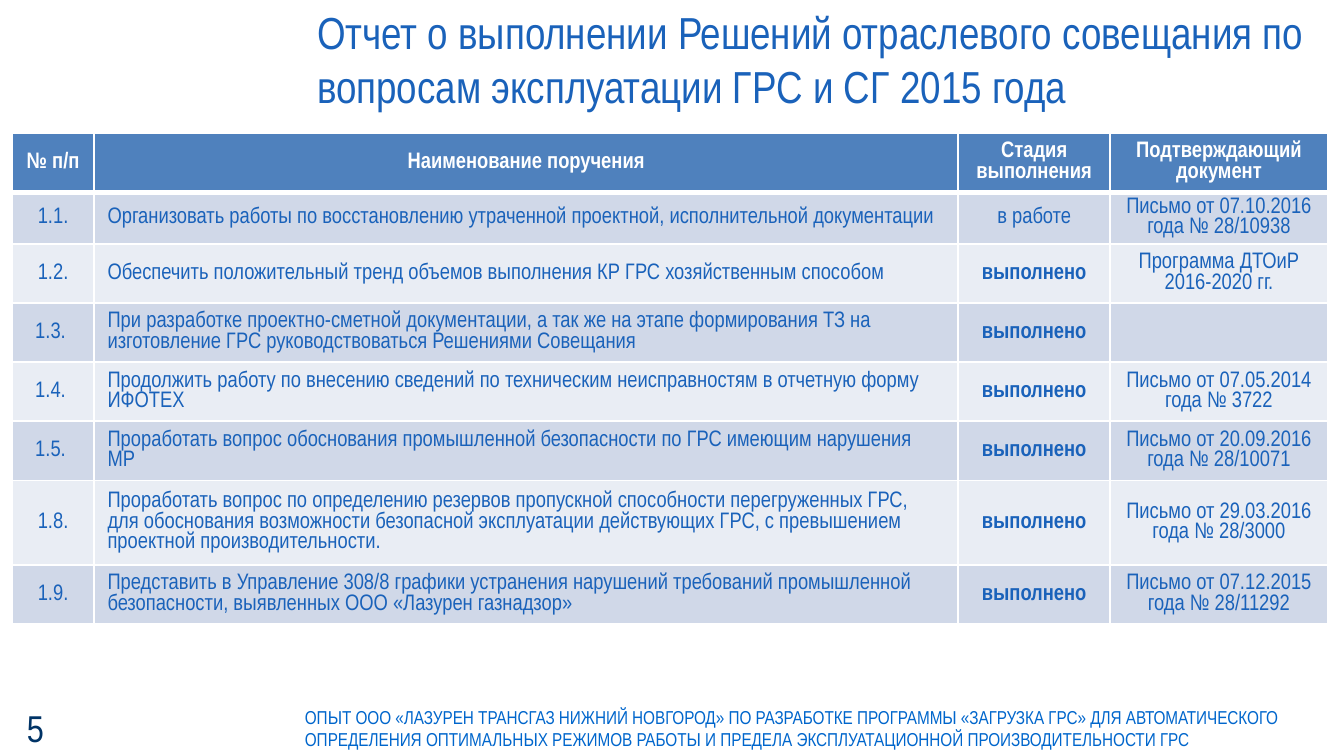
import dataclasses

import lxml.etree
import pptx
import pptx.dml.color
import pptx.enum.text
import pptx.oxml.ns
import pptx.util

RGBColor = pptx.dml.color.RGBColor
Align = pptx.enum.text.PP_ALIGN
Anchor = pptx.enum.text.MSO_ANCHOR

WHITE = RGBColor(0xFF, 0xFF, 0xFF)
TEXT_BLUE = RGBColor(0x1A, 0x62, 0xBA)
FOOTER_BLUE = RGBColor(0x00, 0x66, 0xCC)
NUMBER_BLUE = RGBColor(0x00, 0x33, 0x66)
HEADER_FILL = RGBColor(0x4F, 0x81, 0xBD)
BAND_FILLS = (RGBColor(0xD0, 0xD8, 0xE8), RGBColor(0xE9, 0xED, 0xF4))

FONT = "Arial Narrow"
SLIDE_WIDTH = pptx.util.Inches(10)
SLIDE_HEIGHT = SLIDE_WIDTH * 9 // 16
GRID_STEP = SLIDE_WIDTH // 1000

COLUMN_SPANS = (61, 643, 113, 162)
HEADER_SPAN = 44
HEADERS = ("№ п/п", "Наименование поручения", "Стадия выполнения", "Подтверждающий документ")
DONE = "выполнено"


@dataclasses.dataclass(frozen=True)
class Area:
    """A rectangle in grid columns and rows."""
    column: int
    row: int
    columns: int
    rows: int

    def lengths(self) -> list[int]:
        return [span * GRID_STEP for span in dataclasses.astuple(self)]


@dataclasses.dataclass(frozen=True)
class TextStyle:
    size: int
    color: RGBColor
    bold: bool = False
    align: Align = Align.LEFT
    line_spacing: float | pptx.util.Length = 1.0


@dataclasses.dataclass(frozen=True)
class Assignment:
    number: str
    task: str
    document: str = ""
    stage: str = DONE
    span: int = 44


ASSIGNMENTS = (
    Assignment("1.1.", "Организовать работы по восстановлению утраченной проектной, "
               "исполнительной документации",
               "Письмо от 07.10.2016 года № 28/10938", stage="в работе", span=25),
    Assignment("1.2.", "Обеспечить положительный тренд объемов выполнения КР ГРС "
               "хозяйственным способом", "Программа ДТОиР 2016-2020 гг."),
    Assignment("1.3. ", "При разработке проектно-сметной документации, а так же на этапе "
               "формирования ТЗ на изготовление ГРС руководствоваться Решениями Совещания"),
    Assignment("1.4. ", "Продолжить работу по внесению сведений по техническим "
               "неисправностям в отчетную форму ИФОТЕХ",
               "Письмо от 07.05.2014 года № 3722"),
    Assignment("1.5. ", "Проработать вопрос обоснования промышленной безопасности по ГРС "
               "имеющим нарушения МР", "Письмо от 20.09.2016 года № 28/10071"),
    Assignment("1.8.", "Проработать вопрос по определению резервов пропускной способности "
               "перегруженных ГРС, для обоснования возможности безопасной эксплуатации "
               "действующих ГРС, с превышением проектной производительности.",
               "Письмо от 29.03.2016 года № 28/3000", span=63),
    Assignment("1.9.", "Представить в Управление 308/8 графики устранения нарушений "
               "требований промышленной безопасности, выявленных ООО «Лазурен газнадзор»",
               "Письмо от 07.12.2015 года № 28/11292"),
)


def write(text_frame, text: str, style: TextStyle) -> None:
    text_frame.word_wrap = True
    paragraph = text_frame.paragraphs[0]
    paragraph.text = text
    paragraph.alignment = style.align
    paragraph.line_spacing = style.line_spacing
    font = paragraph.font
    font.name = FONT
    font.size = pptx.util.Pt(style.size)
    font.bold = style.bold
    font.color.rgb = style.color


def add_title(slide, area: Area, text: str, style: TextStyle) -> None:
    title = slide.shapes.title
    title.left, title.top, title.width, title.height = area.lengths()
    title.text_frame.auto_size = pptx.enum.text.MSO_AUTO_SIZE.NONE
    title.text_frame.vertical_anchor = Anchor.MIDDLE
    write(title.text_frame, text, style)


def add_text(slide, area: Area, text: str, style: TextStyle):
    text_frame = slide.shapes.add_textbox(*area.lengths()).text_frame
    write(text_frame, text, style)
    return text_frame


def add_borders(cell, top: int, bottom: int) -> None:
    """Draw white cell borders; top and bottom are widths in points."""
    properties = cell._tc.get_or_add_tcPr()
    qn = pptx.oxml.ns.qn
    for side, width in (("L", 1), ("R", 1), ("T", top), ("B", bottom)):
        line = lxml.etree.SubElement(properties, qn(f"a:ln{side}"), w=str(pptx.util.Pt(width)))
        fill = lxml.etree.SubElement(line, qn("a:solidFill"))
        lxml.etree.SubElement(fill, qn("a:srgbClr"), val=str(WHITE))


def fill_cell(cell, text: str, style: TextStyle, fill: RGBColor, top: int, bottom: int) -> None:
    cell.vertical_anchor = Anchor.MIDDLE
    cell.margin_left = cell.margin_right = pptx.util.Inches(0.1)
    cell.margin_top = cell.margin_bottom = pptx.util.Inches(0.04)
    write(cell.text_frame, text, style)
    add_borders(cell, top, bottom)
    cell.fill.solid()
    cell.fill.fore_color.rgb = fill


def add_assignment_table(slide, area: Area) -> None:
    row_spans = [HEADER_SPAN] + [assignment.span for assignment in ASSIGNMENTS]
    frame = slide.shapes.add_table(len(row_spans), len(COLUMN_SPANS), *area.lengths())
    table = frame.table
    for table_column, span in zip(table.columns, COLUMN_SPANS):
        table_column.width = span * GRID_STEP
    for table_row, span in zip(table.rows, row_spans):
        table_row.height = span * GRID_STEP
    frame.height = area.rows * GRID_STEP

    header = TextStyle(12, WHITE, bold=True, align=Align.CENTER,
                       line_spacing=pptx.util.Pt(11))
    centred = dataclasses.replace(header, color=TEXT_BLUE, bold=False)
    for cell, text in zip(table.rows[0].cells, HEADERS):
        fill_cell(cell, text, header, HEADER_FILL, top=1, bottom=3)
    for index, assignment in enumerate(ASSIGNMENTS):
        entries = (
            (assignment.number, centred),
            (assignment.task, dataclasses.replace(centred, align=Align.LEFT)),
            (assignment.stage, dataclasses.replace(centred, bold=assignment.stage == DONE)),
            (assignment.document, centred),
        )
        for cell, (text, style) in zip(table.rows[index + 1].cells, entries):
            fill_cell(cell, text, style, BAND_FILLS[index % 2],
                      top=3 if index == 0 else 1, bottom=1)


def main() -> None:
    presentation = pptx.Presentation()
    presentation.slide_width = SLIDE_WIDTH
    presentation.slide_height = SLIDE_HEIGHT
    slide = presentation.slides.add_slide(presentation.slide_layouts[5])

    add_title(slide, Area(226, 5, 764, 77),
              "Отчет о выполнении Решений отраслевого совещания по вопросам "
              "эксплуатации ГРС и СГ 2015 года", TextStyle(24, TEXT_BLUE))
    number_frame = add_text(slide, Area(0, 520, 209, 42), "5", TextStyle(20, NUMBER_BLUE))
    number_frame.vertical_anchor = Anchor.MIDDLE
    number_frame.margin_left = pptx.util.Inches(0.2)
    number_frame.margin_top = number_frame.margin_right = number_frame.margin_bottom = 0
    add_assignment_table(slide, Area(9, 99, sum(COLUMN_SPANS), 400))
    add_text(slide, Area(217, 520, 772, 44),
             "ОПЫТ ООО «ЛАЗУРЕН ТРАНСГАЗ НИЖНИЙ НОВГОРОД» ПО РАЗРАБОТКЕ ПРОГРАММЫ "
             "«ЗАГРУЗКА ГРС» ДЛЯ АВТОМАТИЧЕСКОГО ОПРЕДЕЛЕНИЯ ОПТИМАЛЬНЫХ РЕЖИМОВ РАБОТЫ "
             "И ПРЕДЕЛА ЭКСПЛУАТАЦИОННОЙ ПРОИЗВОДИТЕЛЬНОСТИ ГРС", TextStyle(10, FOOTER_BLUE))
    presentation.save("out.pptx")


if __name__ == "__main__":
    main()
